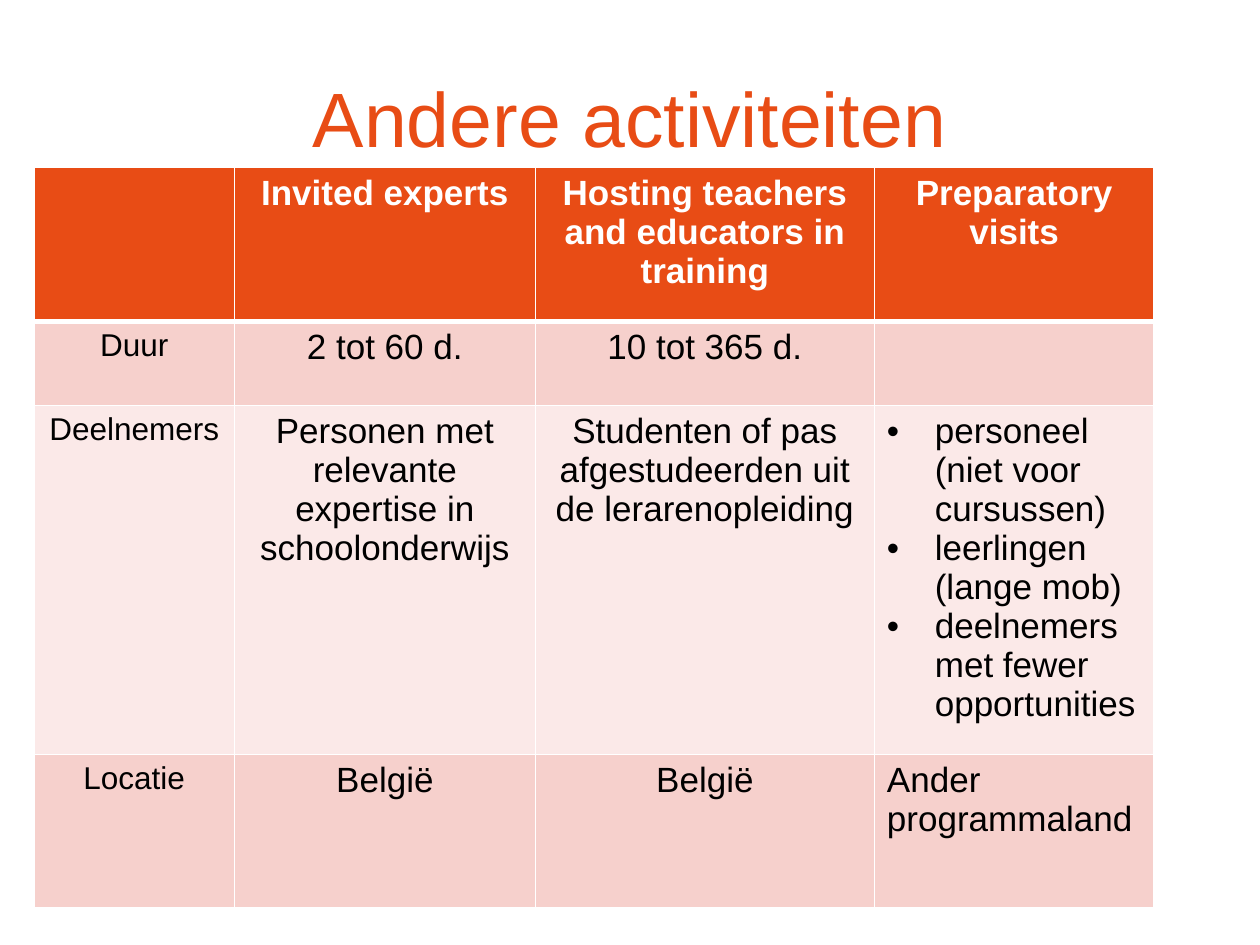
from lxml.etree import SubElement
from pptx import Presentation
from pptx.dml.color import RGBColor
from pptx.enum.text import MSO_ANCHOR, PP_ALIGN
from pptx.oxml.ns import qn
from pptx.util import Inches, Pt

HUES = {"head": "E84C15", "odd": "F6D0CC", "even": "FBE9E8",
        "white": "FFFFFF", "black": "000000"}
COLS = [1.59, 2.39, 2.69, 2.22]
ROWS = [1.22, 0.67, 2.55, 1.22]
# A list holds bullet items
CELLS = [
    ["", "Invited experts", "Hosting teachers and educators in training",
     "Preparatory visits"],
    ["Duur", "2 tot 60 d.", "10 tot 365 d.", ""],
    ["Deelnemers", "Personen met relevante expertise in schoolonderwijs",
     "Studenten of pas afgestudeerden uit de lerarenopleiding",
     ["personeel (niet voor cursussen)", "leerlingen (lange mob)",
      "deelnemers met fewer opportunities"]],
    ["Locatie", "België", "België", "Ander programmaland"],
]


def style(para, hue, **form):
    for key, value in {"name": "Arial", **form}.items():
        setattr(para.font, key, value)
    para.font.color.rgb = RGBColor.from_string(HUES[hue])


def add_bullet(para):
    props = para._p.get_or_add_pPr()
    props.set("marL", str(Inches(0.38)))
    props.set("indent", str(-Inches(0.38)))
    SubElement(props, qn("a:buFont"), typeface="Arial")
    SubElement(props, qn("a:buChar"), char="•")


def add_edges(cell, base):
    props = cell._tc.get_or_add_tcPr()
    for side, width in {"L": 1, "R": 1, "T": 1, "B": base}.items():
        line = SubElement(props, qn(f"a:ln{side}"), w=str(Pt(width)))
        fill = SubElement(line, qn("a:solidFill"))
        SubElement(fill, qn("a:srgbClr"), val=HUES["white"])


def add_title(slide, left, top, width, height):
    box = slide.shapes.add_textbox(left, top, width, height)
    frame = box.text_frame
    frame.word_wrap = True
    frame.vertical_anchor = MSO_ANCHOR.MIDDLE
    para = frame.paragraphs[0]
    para.text = "Andere activiteiten"
    para.alignment = PP_ALIGN.CENTER
    style(para, "head", size=Pt(44))


def fill_cell(cell, row, col, text):
    head = row == 0
    # The line under the header, shared by both rows, is thicker
    add_edges(cell, 3 if head else 1)
    if row == 1:
        cell._tc.tcPr.find(qn("a:lnT")).set("w", str(Pt(3)))
    cell.fill.solid()
    tone = "head" if head else "odd" if row % 2 else "even"
    cell.fill.fore_color.rgb = RGBColor.from_string(HUES[tone])

    items = text if isinstance(text, list) else [text]
    cell.text = "\n".join(items)
    for para in cell.text_frame.paragraphs:
        if items is text:
            add_bullet(para)
        elif head or col < len(COLS) - 1:
            para.alignment = PP_ALIGN.CENTER
        style(para, "white" if head else "black", bold=head,
              size=Pt(20 if head or col else 18))


def add_grid(slide, left, top, width, height):
    table = slide.shapes.add_table(
        len(ROWS), len(COLS), left, top, width, height).table
    for col, size in zip(table.columns, COLS):
        col.width = Inches(size)
    for row, size in zip(table.rows, ROWS):
        row.height = Inches(size)
    for row, texts in enumerate(CELLS):
        for col, text in enumerate(texts):
            fill_cell(table.cell(row, col), row, col, text)


def main():
    deck = Presentation()
    deck.slide_width, deck.slide_height = Inches(10), Inches(7.5)
    slide = deck.slides.add_slide(deck.slide_layouts[6])
    add_title(slide, Inches(0.5), Inches(0.3), Inches(9), Inches(1.25))
    add_grid(slide, Inches(0.27), Inches(1.33),
             Inches(sum(COLS)), Inches(sum(ROWS)))
    deck.save("out.pptx")


if __name__ == "__main__":
    main()
